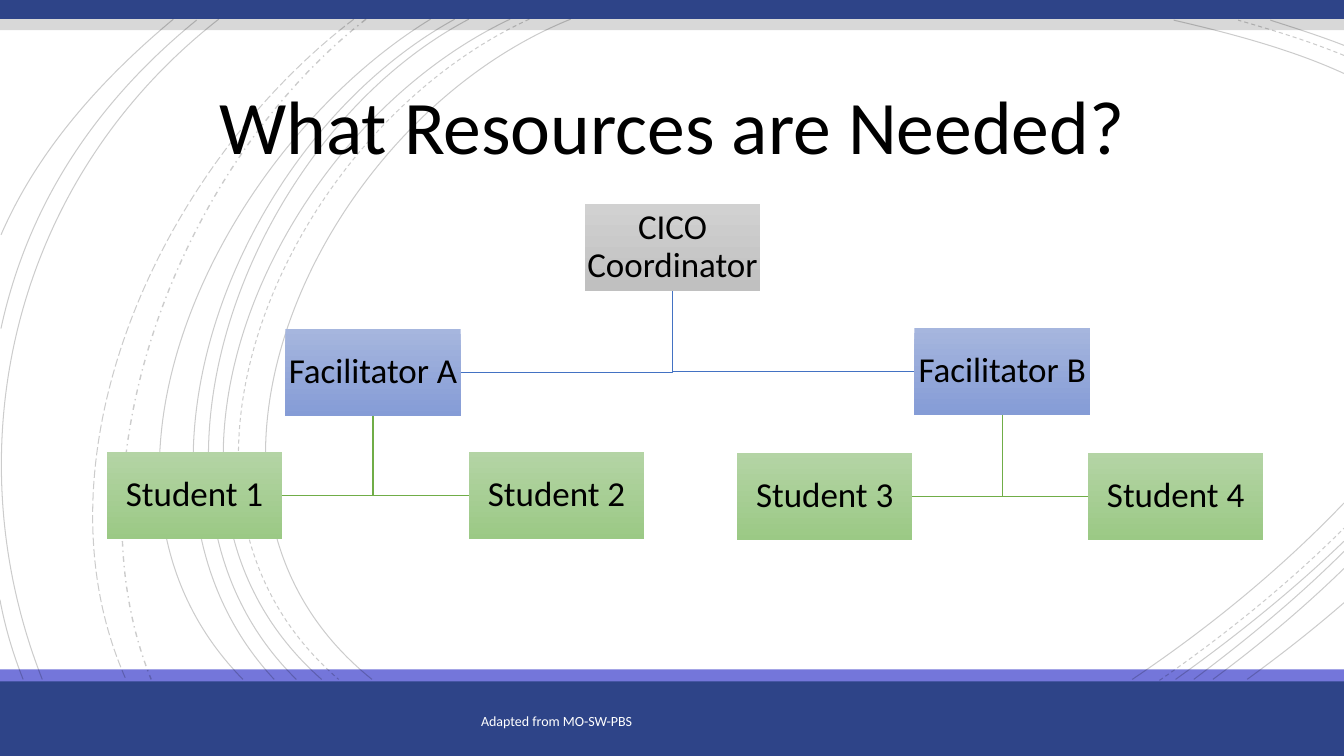
import pptx
import pptx.util
import pptx.dml.color
import pptx.enum.dml
import pptx.enum.shapes
import pptx.enum.text
import pptx.oxml
import pptx.oxml.ns
from pptx.util import Inches

COLORS = {
    "navy": "2E4488", "violet": "7476DA", "silver": "D8D8D8",
    "black": "000000", "white": "FFFFFF",
    "blue_line": "4372C3", "green_line": "70AD47",
}
GRADIENTS = {
    "coordinator": ("D1D1D1", "C0C0C0"),
    "facilitator": ("A6B6DE", "859CD6"),
    "student": ("B4D4A5", "9BC985"),
}
BANDS = [
    (6.7, 0.8, "navy"), (6.64, 0.12, "violet"),
    (-0.03, 0.22, "navy"), (0.19, 0.11, "silver"),
]
DASH = pptx.enum.dml.MSO_LINE
ARCS = {
    DASH.SOLID: [
        [(5.66, 0.19), (3.15, 1.2), (1.42, 4.92), (3.69, 6.74)],
        [(13.33, 0.73), (12.81, 0.49), (12.2, 0.33), (11.64, 0.2)],
        [(11.23, 6.74), (11.99, 6.23), (12.71, 5.64), (13.33, 4.99)],
        [(5.06, 0.19), (2.69, 1.31), (1.09, 4.89), (3.19, 6.74)],
        [(13.33, 0.45), (13.1, 0.36), (12.85, 0.28), (12.6, 0.2)],
        [(11.66, 6.74), (12.25, 6.32), (12.82, 5.86), (13.33, 5.37)],
        [(4.65, 0.19), (2.43, 1.36), (1.09, 4.93), (2.94, 6.74)],
        [(11.84, 6.74), (12.36, 6.35), (12.87, 5.93), (13.33, 5.47)],
        [(4.51, 0.19), (2.31, 1.4), (0.97, 4.86), (2.72, 6.74)],
        [(12.03, 6.74), (12.49, 6.4), (12.93, 6.03), (13.33, 5.64)],
        [(4.27, 0.19), (2.17, 1.48), (0.52, 4.82), (2.41, 6.74)],
        [(12.37, 6.74), (12.7, 6.5), (13.02, 6.25), (13.33, 5.98)],
        [(2.17, 0.19), (0.1, 1.81), (-0.47, 4.48), (0.42, 6.74)],
        [(1.95, 0.2), (0.92, 1.04), (0.27, 2.06), (0.01, 3.26)],
        [(0, 5.95), (0.05, 6.22), (0.13, 6.49), (0.23, 6.74)],
        [(1.72, 0.19), (0.99, 0.8), (0.37, 1.5), (0.01, 2.33)],
    ],
    DASH.DASH: [
        [(5.25, 0.19), (2.85, 1.29), (1.22, 4.9), (3.36, 6.74)],
        [(13.33, 0.55), (12.99, 0.41), (12.63, 0.3), (12.28, 0.2)],
        [(11.5, 6.75), (12.15, 6.3), (12.78, 5.79), (13.33, 5.24)],
    ],
    DASH.DASH_DOT: [[(3.63, 0.19), (1.76, 1.65), (0.65, 4.65), (1.5, 6.74)]],
    DASH.LONG_DASH: [[(3.51, 0.19), (1.57, 1.67), (0.28, 4.56), (1.25, 6.74)]],
}
BOX_W, BOX_H = 1.74, 0.87
BOXES = {
    "CICO Coordinator": (5.8, 2.02, "coordinator"),
    "Facilitator A": (2.83, 3.26, "facilitator"),
    "Student 1": (1.06, 4.48, "student"),
    "Student 2": (4.65, 4.48, "student"),
    "Facilitator B": (9.07, 3.25, "facilitator"),
    "Student 3": (7.31, 4.49, "student"),
    "Student 4": (10.79, 4.49, "student"),
}
REPORTS = {
    "Facilitator B": ("Student 4", "Student 3"),
    "Facilitator A": ("Student 2", "Student 1"),
    "CICO Coordinator": ("Facilitator B", "Facilitator A"),
}


def rgb(value):
    return pptx.dml.color.RGBColor.from_string(value)


def write_text(sp, text, size, color, inset=(0.1, 0.05), anchor="MIDDLE", spacing=None):
    tf = sp.text_frame
    x, y = (Inches(v) for v in inset)
    frame_format = {
        "word_wrap": True,
        "vertical_anchor": pptx.enum.text.MSO_ANCHOR[anchor],
        "margin_left": x, "margin_right": x, "margin_top": y, "margin_bottom": y,
    }
    for name, value in frame_format.items():
        setattr(tf, name, value)
    p = tf.paragraphs[0]
    p.alignment = pptx.enum.text.PP_ALIGN.CENTER
    p.line_spacing = spacing
    r = p.add_run()
    r.text = text
    for name, value in {"name": "Calibri", "size": pptx.util.Pt(size)}.items():
        setattr(r.font, name, value)
    r.font.color.rgb = rgb(COLORS[color])


def add_rect(s, x, y, w, h):
    sp = s.shapes.add_shape(pptx.enum.shapes.MSO_SHAPE.RECTANGLE,
                            Inches(x), Inches(y), Inches(w), Inches(h))
    sp.shadow.inherit = False
    sp.line.fill.background()
    return sp


def add_band(s, y, h, color):
    sp = add_rect(s, 0, y, 13.33, h)
    sp.fill.solid()
    sp.fill.fore_color.rgb = rgb(COLORS[color])


def add_outline(s, points, color, width):
    start, *rest = [(Inches(x), Inches(y)) for x, y in points]
    builder = s.shapes.build_freeform(*start)
    builder.add_line_segments(rest, close=False)
    sp = builder.convert_to_shape()
    sp.shadow.inherit = False
    sp.fill.background()
    sp.line.width = pptx.util.Pt(width)
    sp.line.color.rgb = rgb(COLORS[color])
    return sp


def add_arc(s, points, dash):
    sp = add_outline(s, points, "black", 1 if dash == DASH.DASH_DOT else 0.75)
    sp.line.dash_style = dash
    qn = pptx.oxml.ns.qn
    outline = next(sp._element.iter(qn("a:path")))
    curve = pptx.oxml.parse_xml(f'<a:cubicBezTo {pptx.oxml.ns.nsdecls("a")}/>')
    for segment in outline.findall(qn("a:lnTo")):
        curve.append(segment[0])
        outline.remove(segment)
    outline.append(curve)
    line_color = next(sp.line._ln.iter(qn("a:srgbClr")))
    line_color.append(pptx.oxml.parse_xml(
        f'<a:alpha {pptx.oxml.ns.nsdecls("a")} val="20000"/>'))


def add_branch(s, parent, child):
    px, py, level = BOXES[parent]
    cx, cy, _ = BOXES[child]
    trunk, level_y = px + BOX_W / 2, cy + BOX_H / 2
    side = cx if cx > px else cx + BOX_W
    color = "blue_line" if level == "coordinator" else "green_line"
    add_outline(s, [(trunk, py + BOX_H), (trunk, level_y), (side, level_y)], color, 1)


def add_box(s, text, x, y, level):
    sp = add_rect(s, x, y, BOX_W, BOX_H)
    sp.fill.gradient()
    sp.fill.gradient_angle = 270
    for stop, color in zip(sp.fill.gradient_stops, GRADIENTS[level]):
        stop.color.rgb = rgb(color)
    write_text(sp, text, 25, "black", inset=(0.02, 0.02), spacing=0.9)


def add_title(s, text):
    sp = s.shapes.title
    s.shapes._spTree.append(sp._element)
    place = {"left": 0, "top": 0.69, "width": 13.33, "height": 1.19}
    for name, value in place.items():
        setattr(sp, name, Inches(value))
    write_text(sp, text, 54, "black", spacing=0.9)


def add_credit(s, text):
    sp = s.shapes.add_textbox(Inches(3.99), Inches(7.02), Inches(3.06), Inches(0.27))
    write_text(sp, text, 10, "white", anchor="TOP")


def main():
    prs = pptx.Presentation()
    prs.slide_width, prs.slide_height = Inches(13.33), Inches(7.5)
    s = prs.slides.add_slide(prs.slide_layouts[5])
    for band in BANDS:
        add_band(s, *band)
    for dash, arcs in ARCS.items():
        for points in arcs:
            add_arc(s, points, dash)
    add_title(s, "What Resources are Needed?")
    for parent, children in REPORTS.items():
        for child in children:
            add_branch(s, parent, child)
    for text, place in BOXES.items():
        add_box(s, text, *place)
    add_credit(s, "Adapted from MO-SW-PBS")
    prs.save("out.pptx")


if __name__ == "__main__":
    main()
